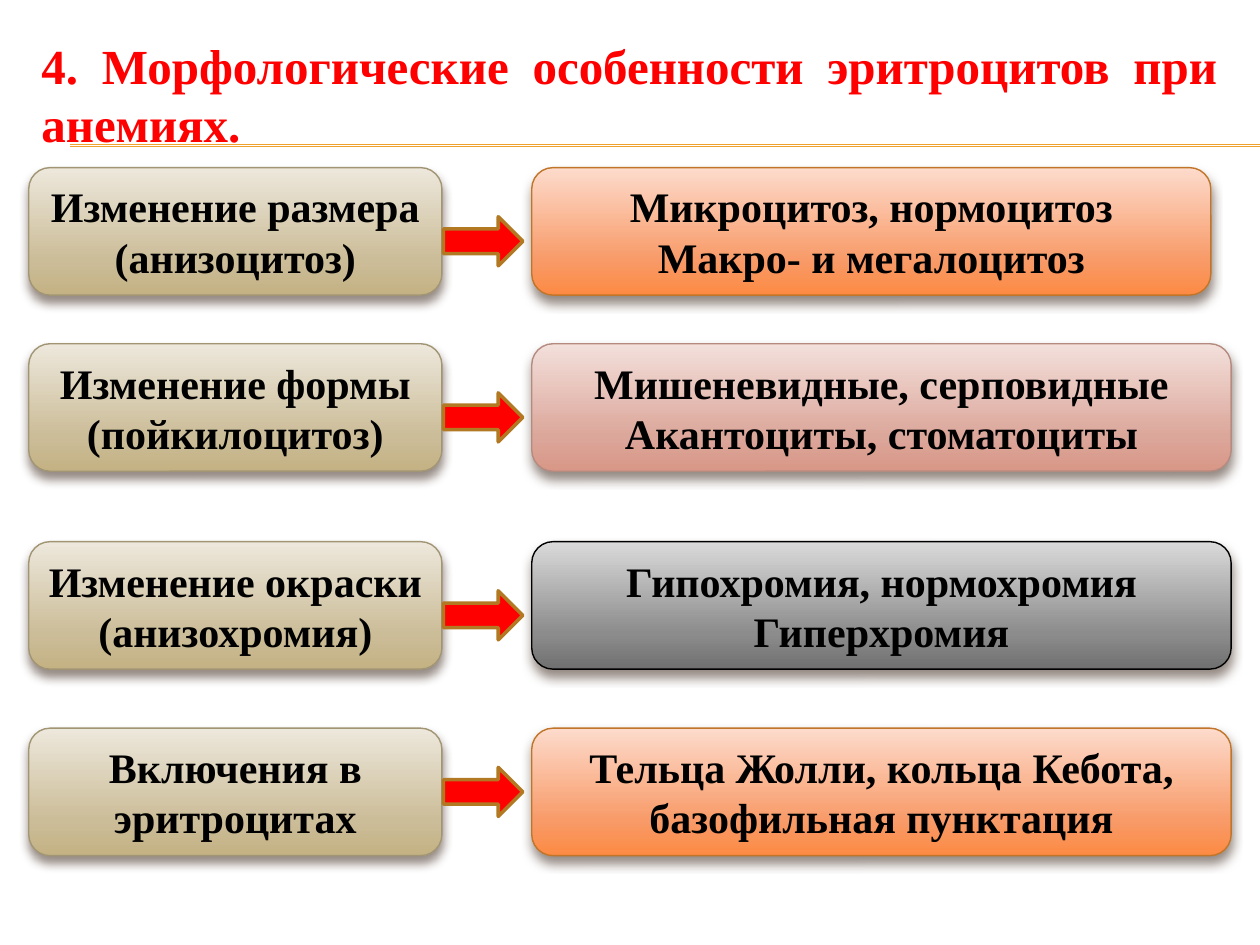
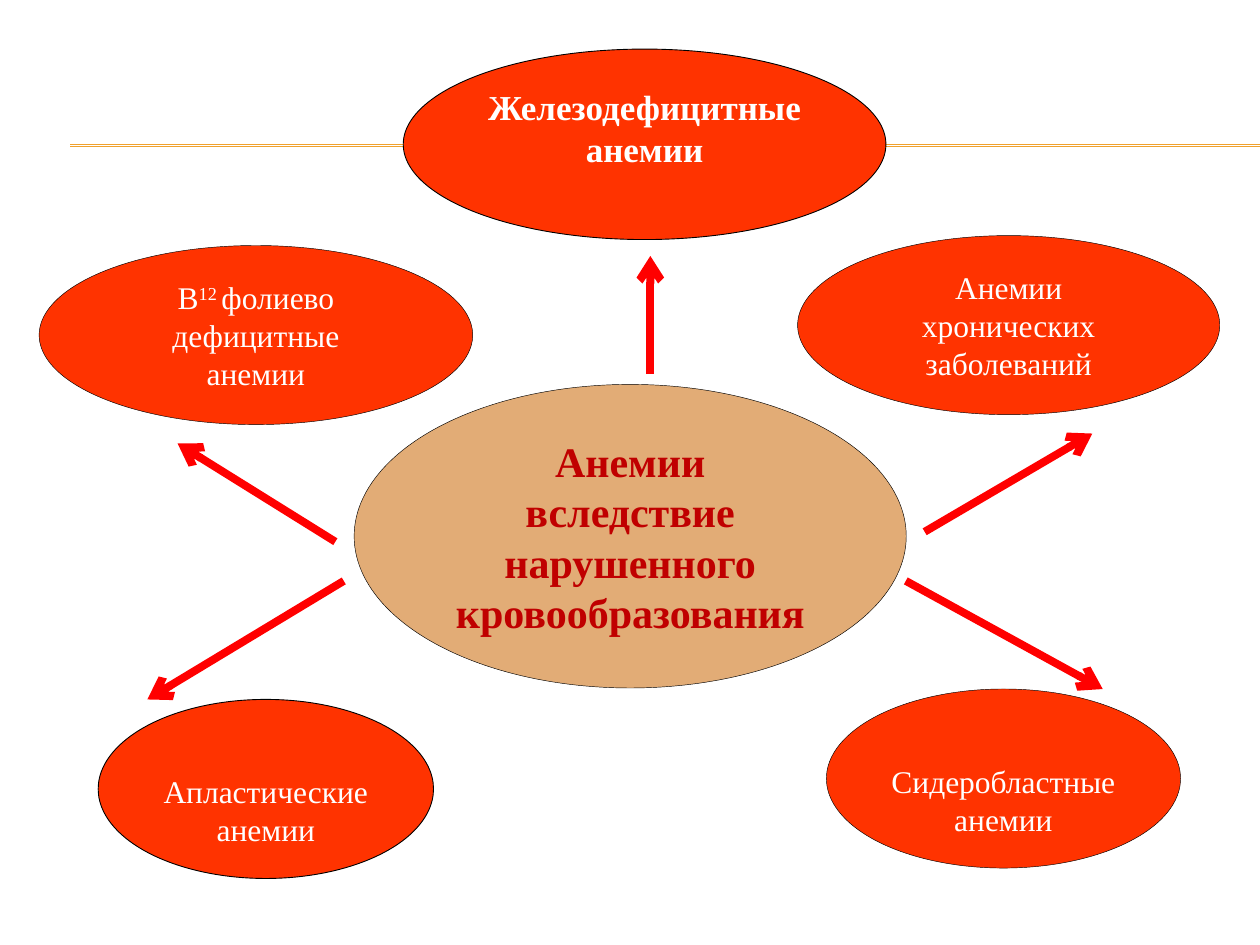
import dataclasses
import copy

import pptx
import pptx.dml.color
import pptx.enum.shapes
import pptx.enum.text
import pptx.oxml
import pptx.oxml.ns
import pptx.util

Cm = pptx.util.Cm
Pt = pptx.util.Pt
Preset = pptx.enum.shapes.MSO_SHAPE
Align = pptx.enum.text.PP_ALIGN
Anchor = pptx.enum.text.MSO_ANCHOR
qn = pptx.oxml.ns.qn

# Shared look
FONT = "Times New Roman"
RED, BLACK, WHITE = "FF0000", "000000", "FFFFFF"
RULE, ARROW_EDGE = "F0A22E", "B27822"
FORM_RED, CENTRE_TAN, CENTRE_TEXT = "FF3300", "E2AC76", "C00000"
SIDE_INSET = 0.1


@dataclasses.dataclass(frozen=True)
class Palette:
    stops: tuple[str, str, str]
    edge: str


SAND = Palette(("EDE8DC", "CCBD99", "C4B284"), "A19574")
ORANGE = Palette(("FDDBCC", "F89B69", "FC8A43"), "C17529")
ROSE = Palette(("F3E0DB", "DCA79B", "D89787"), "B58B80")
GREY = Palette(("DADADA", "8C8C8C", "707070"), BLACK)


@dataclasses.dataclass(frozen=True)
class Box:
    left: float
    top: float
    width: float
    height: float

    def lengths(self) -> tuple:
        return Cm(self.left), Cm(self.top), Cm(self.width), Cm(self.height)


@dataclasses.dataclass(frozen=True)
class Change:
    top: float
    cause: str
    effect: str
    palette: Palette
    effect_width: float = 14.1
    arrow_drop: float = 0.99


@dataclasses.dataclass(frozen=True)
class Oval:
    box: Box
    text: str
    size: float = 18
    bold: bool = False
    fill: str = FORM_RED
    colour: str = WHITE
    edge_width: float = 0.25
    top_inset: float = 0.13
    bottom_inset: float = 0.13


CHANGES = (
    Change(3.38, "Изменение размера (анизоцитоз)",
           "Микроцитоз, нормоцитоз\nМакро- и мегалоцитоз", ORANGE, effect_width=13.69),
    Change(6.93, "Изменение формы (пойкилоцитоз)",
           "Мишеневидные, серповидные\nАкантоциты, стоматоциты", ROSE),
    Change(10.92, "Изменение окраски (анизохромия)",
           "Гипохромия, нормохромия\nГиперхромия", GREY),
    Change(14.68, "Включения в эритроцитах",
           "Тельца Жолли, кольца Кебота, базофильная пунктация", ORANGE, arrow_drop=0.79),
)

# Carets enclose superscript text
OVALS = (
    Oval(Box(7.14, 7.75, 11.13, 6.12), "Анемии\vвследствие\nнарушенного\nкровообразования",
         24, True, CENTRE_TAN, CENTRE_TEXT),
    Oval(Box(8.13, 0.99, 9.73, 3.84), "Железодефицитные\nанемии", 20, True,
         edge_width=0.5, bottom_inset=0.82),
    Oval(Box(16.08, 4.75, 8.51, 3.61), "Анемии\nхронических\nзаболеваний"),
    Oval(Box(0.79, 4.95, 8.74, 3.61), "В^12 ^фолиево\nдефицитные\nанемии"),
    Oval(Box(16.66, 13.89, 7.14, 3.61), "Сидеробластные\nанемии", top_inset=0.98),
    Oval(Box(1.98, 14.1, 6.76, 3.61), "Апластические\nанемии",
         edge_width=0.5, top_inset=0.98),
)

# Arrow starts and ends: x1, y1, x2, y2
BRANCHES = (
    (18.64, 10.72, 22.02, 8.74),
    (18.26, 11.71, 22.23, 13.89),
    (6.93, 11.71, 2.97, 14.1),
    (6.76, 10.92, 3.58, 8.94),
    (13.11, 7.54, 13.11, 5.16),
)


def rgb(colour: str) -> pptx.dml.color.RGBColor:
    return pptx.dml.color.RGBColor.from_string(colour)


def add_element(parent, tag: str, **attributes: str):
    child = pptx.oxml.parse_xml(f'<{tag} {pptx.oxml.ns.nsdecls("a")}/>')
    for key, value in attributes.items():
        child.set(key, value)
    parent.append(child)
    return child


def write(frame, text: str, size: float, colour: str, bold: bool,
          align=Align.CENTER) -> None:
    frame.word_wrap = True
    frame.text = text
    for paragraph in frame.paragraphs:
        paragraph.alignment = align
        pieces = paragraph.text.split("^")
        if len(pieces) > 1:
            paragraph.text = pieces[0]
            for piece in pieces[1:]:
                paragraph.add_run().text = piece
        for index, run in enumerate(paragraph.runs):
            run.font.name, run.font.size, run.font.bold = FONT, Pt(size), bold
            run.font.color.rgb = rgb(colour)
            if len(pieces) > 1 and index % 2:
                run.font._element.set("baseline", "30000")


def add_form(slide, preset, box: Box, fill: str, edge: str, edge_width: float):
    form = slide.shapes.add_shape(preset, *box.lengths())
    form.shadow.inherit = False
    form.fill.solid()
    form.fill.fore_color.rgb = rgb(fill)
    form.line.color.rgb = rgb(edge)
    form.line.width = Pt(edge_width)
    frame = form.text_frame
    frame.vertical_anchor = Anchor.MIDDLE
    frame.margin_left = frame.margin_right = Cm(SIDE_INSET)
    return form


def add_line(slide, ends: tuple[float, float, float, float], colour: str, width: float):
    line = slide.shapes.add_connector(pptx.enum.shapes.MSO_CONNECTOR.STRAIGHT,
                                      *(Cm(value) for value in ends))
    line.line.color.rgb = rgb(colour)
    line.line.width = Pt(width)
    add_element(line._element.spPr, "a:effectLst")
    return line


def add_rule(slide) -> None:
    """Double golden rule behind everything else."""
    for y in (2.95, 2.92):
        line = add_line(slide, (1.42, y, 25.4, y), RULE, 0.75)
        slide.shapes._spTree.insert(2, line._element)


def add_panel(slide, box: Box, text: str, palette: Palette) -> None:
    """Rounded panel with a vertical gradient and a soft shadow."""
    panel = add_form(slide, Preset.ROUNDED_RECTANGLE, box, WHITE, palette.edge, 0.79)
    panel.fill.gradient()
    panel.fill.gradient_angle = 270
    properties = panel._element.spPr
    stop_list = properties.find(".//" + qn("a:gsLst"))
    stop_list.append(copy.deepcopy(stop_list[0]))
    for stop, position, colour in zip(panel.fill.gradient_stops, (0, 0.72, 1), palette.stops):
        stop.position = position
        stop.color.rgb = rgb(colour)
    shadow = add_element(properties.find(qn("a:effectLst")), "a:outerShdw",
                         blurRad=str(Pt(6)), dist=str(Pt(4)), dir="5400000", rotWithShape="0")
    shade = add_element(shadow, "a:srgbClr", val="4E3B30")
    add_element(shade, "a:alpha", val="60000")
    write(panel.text_frame, text, 24, BLACK, True)


def build_morphology(deck) -> None:
    slide = deck.slides.add_slide(deck.slide_layouts[5])
    add_rule(slide)

    # Title
    title = slide.shapes.title
    title.left, title.top, title.width, title.height = Box(0.58, 0.58, 24.21, 2.64).lengths()
    write(title.text_frame, "4. Морфологические особенности эритроцитов при анемиях.",
          28, RED, True, Align.JUSTIFY)
    title.text_frame.vertical_anchor = Anchor.TOP
    title.text_frame.auto_size = pptx.enum.text.MSO_AUTO_SIZE.NONE

    # Cause, arrow and effect in each row
    for change in CHANGES:
        add_panel(slide, Box(0.58, change.top, 8.33, 2.57), change.cause, SAND)
        add_panel(slide, Box(10.72, change.top, change.effect_width, 2.57),
                  change.effect, change.palette)
        add_form(slide, Preset.RIGHT_ARROW,
                 Box(8.94, change.top + change.arrow_drop, 1.6, 0.99), RED, ARROW_EDGE, 2)


def build_anemia_forms(deck) -> None:
    slide = deck.slides.add_slide(deck.slide_layouts[6])
    add_rule(slide)

    # Central group and its forms
    for oval in OVALS:
        form = add_form(slide, Preset.OVAL, oval.box, oval.fill, BLACK, oval.edge_width)
        form.text_frame.margin_top = Cm(oval.top_inset)
        form.text_frame.margin_bottom = Cm(oval.bottom_inset)
        write(form.text_frame, oval.text, oval.size, oval.colour, oval.bold)

    # Arrows to the forms
    for ends in BRANCHES:
        branch = add_line(slide, ends, RED, 4.5)
        add_element(branch.line._get_or_add_ln(), "a:tailEnd", type="arrow")


def main() -> None:
    deck = pptx.Presentation()
    deck.slide_width, deck.slide_height = Cm(25.4), Cm(19.05)
    build_morphology(deck)
    build_anemia_forms(deck)
    deck.save("out.pptx")


if __name__ == "__main__":
    main()
